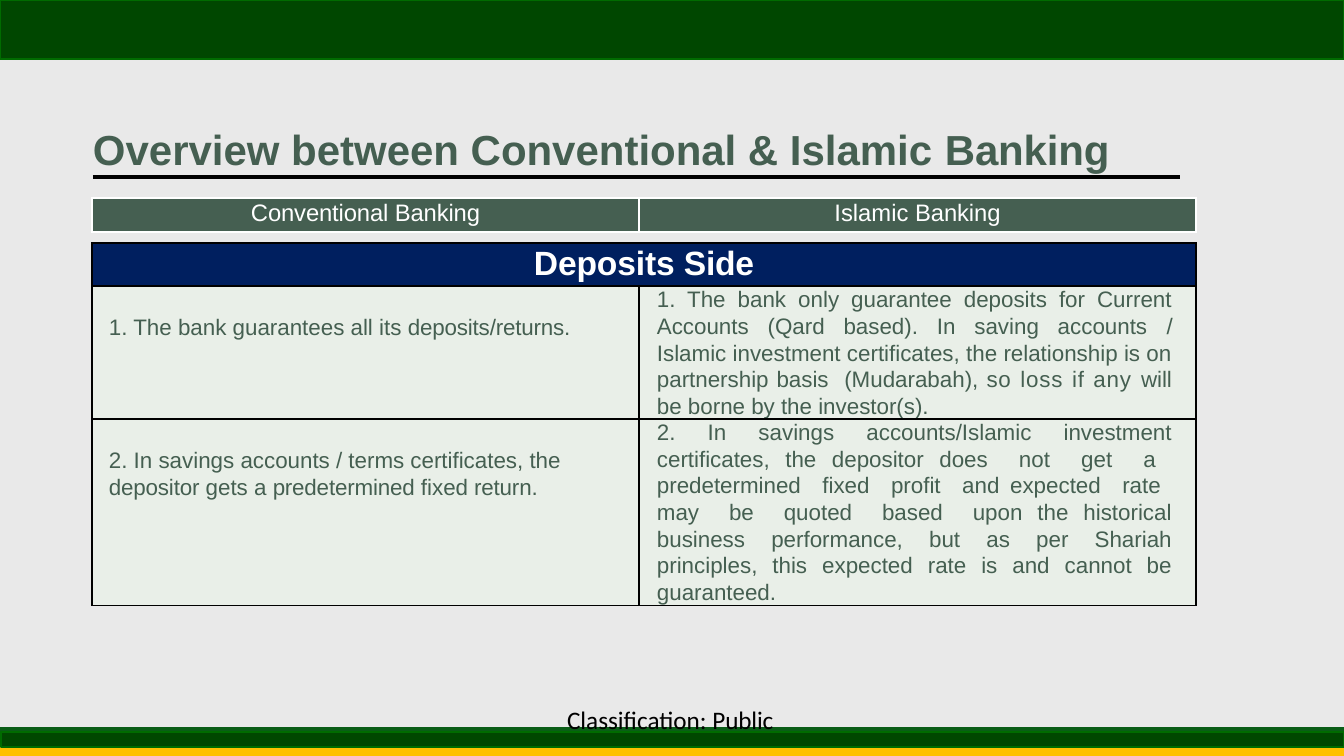
from dataclasses import dataclass
from lxml.etree import SubElement
from pptx import Presentation
from pptx.dml.color import RGBColor
from pptx.enum.shapes import MSO_CONNECTOR, MSO_SHAPE
from pptx.enum.text import MSO_ANCHOR, PP_ALIGN
from pptx.oxml.ns import qn
from pptx.util import Pt

PX = 914400 / 100.8


@dataclass(frozen=True)
class Theme:
    font: str = "Arial"
    footer_font: str = "Calibri"
    sage: str = "455F51"
    mint: str = "E9EFE8"
    navy: str = "001F5F"
    green: str = "004700"
    edge: str = "006B00"
    stripe: str = "0A5D17"
    gold: str = "FFC000"
    panel: str = "D9D9D9"
    black: str = "000000"
    white: str = "FFFFFF"
    title: int = 30
    section: int = 24
    footer: int = 18
    head: int = 17
    body: int = 16


T = Theme()


def px(n):
    return round(n * PX)


def rgb(c):
    return RGBColor.from_string(c)


def add_runs(p, runs, size, color, bold=False, font=T.font):
    """Each run is its text and its letter spacing in points."""
    for text, spacing in runs:
        r = p.add_run()
        r.text = text
        r.font.name, r.font.size, r.font.bold = font, Pt(size), bold
        r.font.color.rgb = rgb(color)
        if spacing:
            r._r.get_or_add_rPr().set("spc", str(round(spacing * 100)))


def set_frame(tf, top=0):
    tf.margin_left = tf.margin_right = tf.margin_bottom = 0
    tf.margin_top = px(top)
    tf.vertical_anchor = MSO_ANCHOR.TOP
    tf.word_wrap = True


def add_band(s, box, color, edge=None, alpha=None):
    sp = s.shapes.add_shape(MSO_SHAPE.RECTANGLE, *map(px, box))
    sp.shadow.inherit = False
    sp.fill.solid()
    sp.fill.fore_color.rgb = rgb(color)
    if alpha:
        clr = sp._element.spPr.find(".//" + qn("a:srgbClr"))
        SubElement(clr, qn("a:alpha"), val=str(alpha * 1000))
    if edge:
        sp.line.color.rgb = rgb(edge)
        sp.line.width = Pt(1)
    else:
        sp.line.fill.background()


def add_rule(s, x1, x2, y, color, width):
    ln = s.shapes.add_connector(MSO_CONNECTOR.STRAIGHT, px(x1), px(y), px(x2), px(y))
    ln.line.color.rgb = rgb(color)
    ln.line.width = Pt(width)
    SubElement(ln._element.spPr, qn("a:effectLst"))


def add_grid(s, box, rows, border):
    left, top, width, height = box
    cols = (547, width - 547)
    frame = s.shapes.add_table(len(rows), 2, *map(px, box))
    table = frame.table
    table.first_row = table.horz_banding = False
    for col, w in zip(table.columns, cols):
        col.width = px(w)
    for row, h in zip(table.rows, rows):
        row.height = px(h)
    for cell in table.iter_cells():
        tcPr = cell._tc.get_or_add_tcPr()
        for side in ("lnL", "lnR", "lnT", "lnB"):
            ln = SubElement(tcPr, qn("a:" + side), w=str(Pt(1)))
            fill = SubElement(ln, qn("a:solidFill"))
            SubElement(fill, qn("a:srgbClr"), val=border)
    return table


def fill_cell(cell, runs, fill, size, color, bold=False, align=PP_ALIGN.CENTER,
              margins=(0, 2, 0), spacing=None):
    cell.fill.solid()
    cell.fill.fore_color.rgb = rgb(fill)
    cell.margin_left, cell.margin_top, cell.margin_right = map(px, margins)
    cell.margin_bottom = 0
    p = cell.text_frame.paragraphs[0]
    p.alignment = align
    if spacing:
        p.line_spacing = spacing
    add_runs(p, runs, size, color, bold)


# Title with its underline
def add_title(s, box):
    left, top, width, height = box
    sp = s.shapes.title
    sp.left, sp.top, sp.width, sp.height = map(px, box)
    tf = sp.text_frame
    set_frame(tf, 3)
    p = tf.paragraphs[0]
    p.alignment = PP_ALIGN.LEFT
    add_runs(p, [("Overview between Conventional & Islamic ", 0), ("Banking", -0.1)],
             T.title, T.sage, True)
    add_rule(s, left, left + 1087, top + 57, T.black, 2.25)


# Column heads
def add_heads(s, box):
    table = add_grid(s, box, [box[3]], T.white)
    heads = ([("Conventional Banking", -0.1)], [("Islamic ", 0), ("Banking", -0.1)])
    for cell, runs in zip(table.iter_cells(), heads):
        fill_cell(cell, runs, T.sage, T.head, T.white)


# Comparison of deposits
def add_deposits(s, box):
    table = add_grid(s, box, [43, 131, 186], T.black)
    table.cell(0, 0).merge(table.cell(0, 1))
    fill_cell(table.cell(0, 0), [("Deposits ", -0.1), ("Side", -0.2)],
              T.navy, T.section, T.white, True)
    conventional = (
        [("1. The bank guarantees all its ", 0), ("deposits/returns.", -0.1)],
        [("2. In savings accounts / terms certificates, the ", 0),
         ("depositor ", -0.1), ("gets a ", 0), ("predetermined ", -0.1),
         ("fixed", 0), (" return.", -0.1)],
    )
    islamic = (
        [("1. The bank only guarantee deposits for Current Accounts  (Qard  based).  "
          "In  saving  accounts  ", 0), ("/ ", -0.5),
         ("Islamic investment certificates, the relationship is on partnership basis  "
          "(Mudarabah), ", 0),
         ("so loss if any ", 0.6), ("will be borne by the investor(s).", 0)],
        [("2. In savings accounts/Islamic investment certificates, the depositor does  "
          "not  get  a  predetermined  fixed  profit  and expected  rate  may  be  "
          "quoted  based  upon the historical business performance, but as per Shariah "
          "principles,  this  expected  rate  is  and  cannot  be guaranteed.", 0)],
    )
    for i, (left, right) in enumerate(zip(conventional, islamic), 1):
        fill_cell(table.cell(i, 0), left, T.mint, T.body, T.sage,
                  align=PP_ALIGN.LEFT, margins=(17, 28, 24), spacing=1.07)
        fill_cell(table.cell(i, 1), right, T.mint, T.body, T.sage,
                  align=PP_ALIGN.JUSTIFY, margins=(18, 0, 24), spacing=1.07)


# Footer stripes and classification
def add_footer(s, box):
    left, top, width, height = box
    add_rule(s, left, left + width, top + 14, T.stripe, 20)
    add_band(s, (left, top + 20, width, 9), T.gold)
    add_band(s, (left + 1, top + 5, width - 1, 15), T.green, T.edge)
    tb = s.shapes.add_textbox(px(left + 567), px(top - 18), px(211), px(28))
    set_frame(tb.text_frame)
    p = tb.text_frame.paragraphs[0]
    p.line_spacing = Pt(18.1)
    add_runs(p, [("Classification: ", 0), ("Public", -0.1)],
             T.footer, T.black, font=T.footer_font)


def main():
    prs = Presentation()
    prs.slide_width, prs.slide_height = px(1344), px(756)
    s = prs.slides.add_slide(prs.slide_layouts[5])
    # Backdrop and top band
    add_band(s, (0, 59, 1344, 668), T.panel, alpha=56)
    add_band(s, (0, 0, 1344, 59), T.green, T.edge)
    add_title(s, (93, 120, 1062, 53))
    add_heads(s, (92, 198, 1104, 34))
    add_deposits(s, (92, 243, 1104, 360))
    add_footer(s, (0, 727, 1344, 29))
    # Title in front of the backdrop
    s.shapes._spTree.append(s.shapes.title._element)
    prs.save("out.pptx")


if __name__ == "__main__":
    main()
